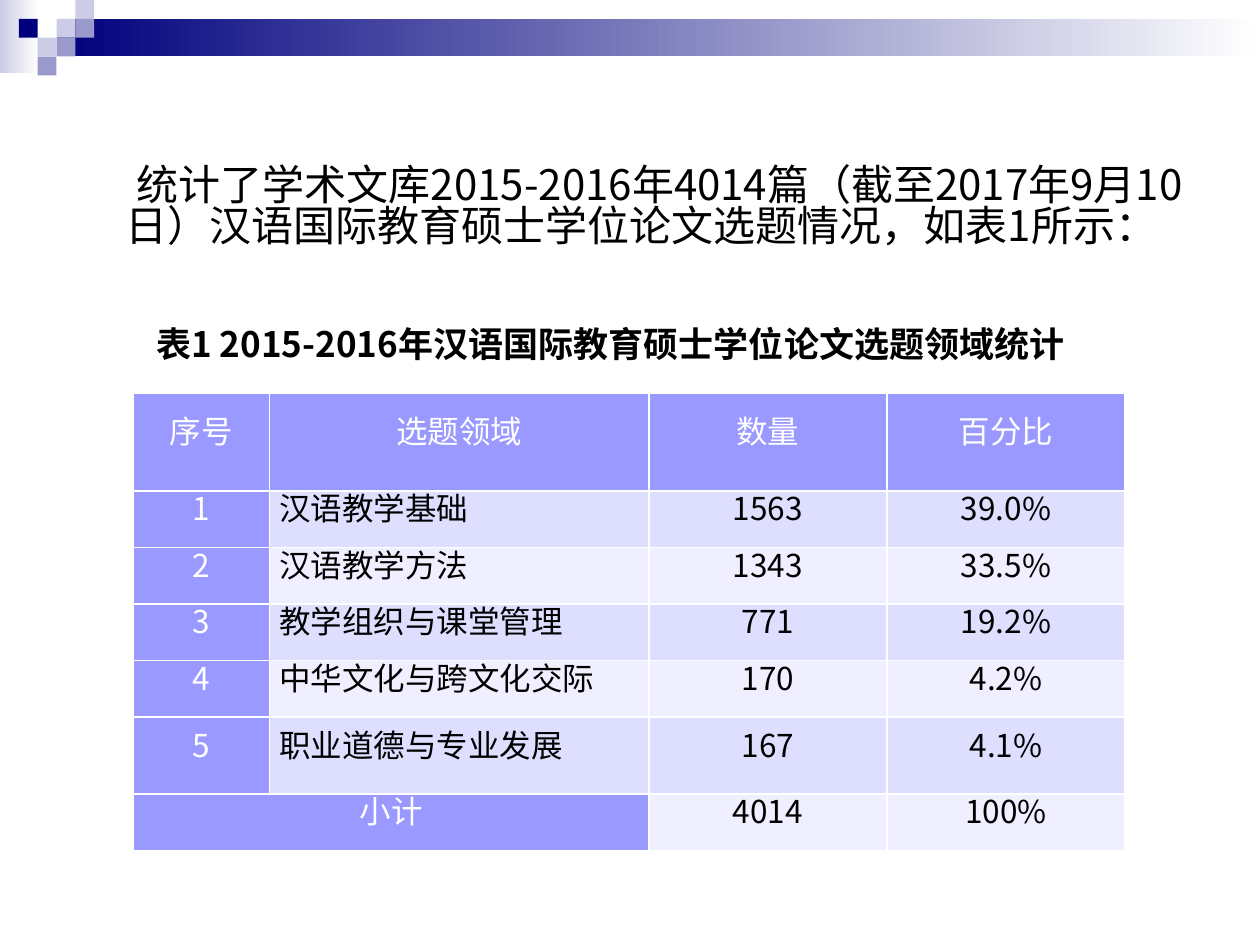
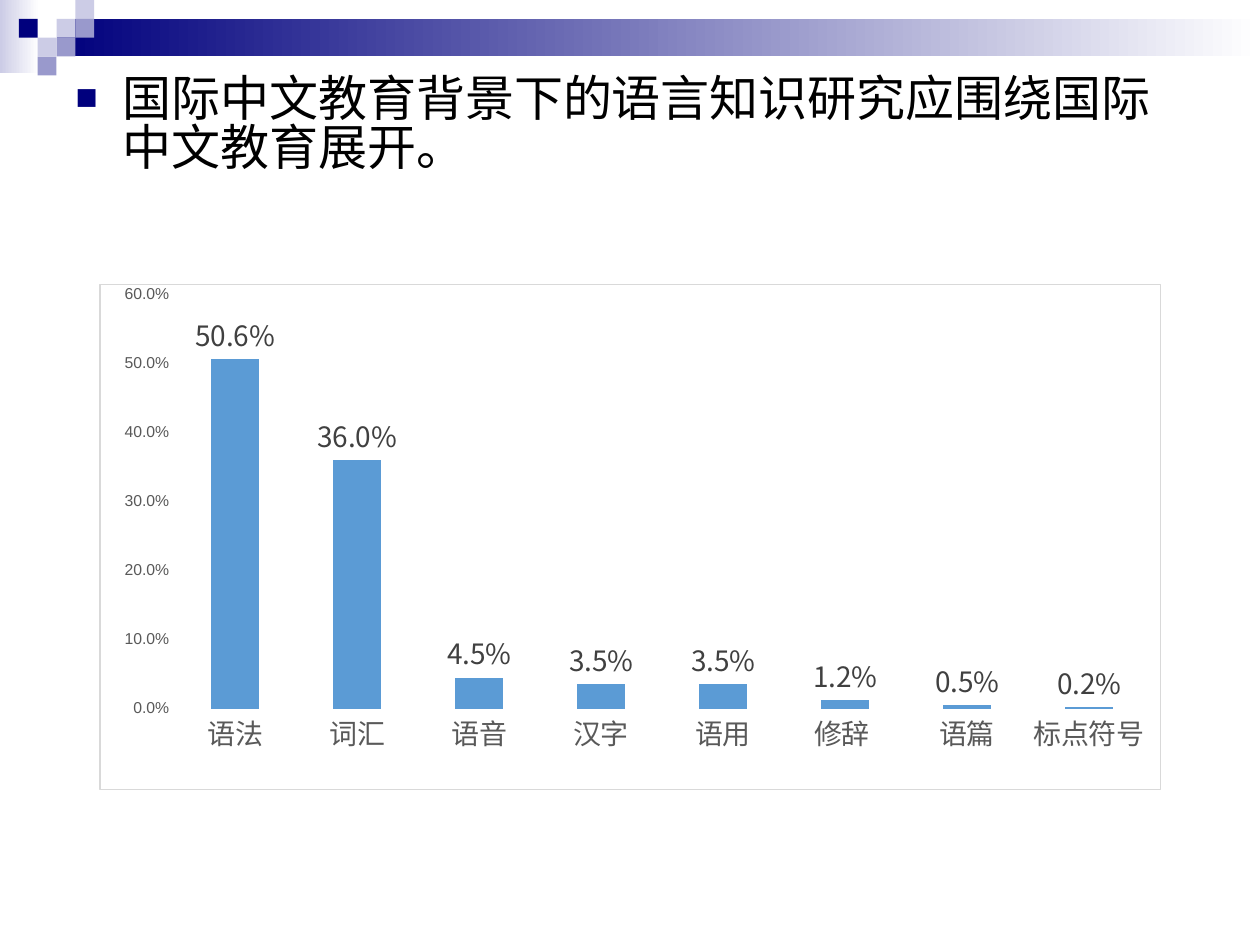
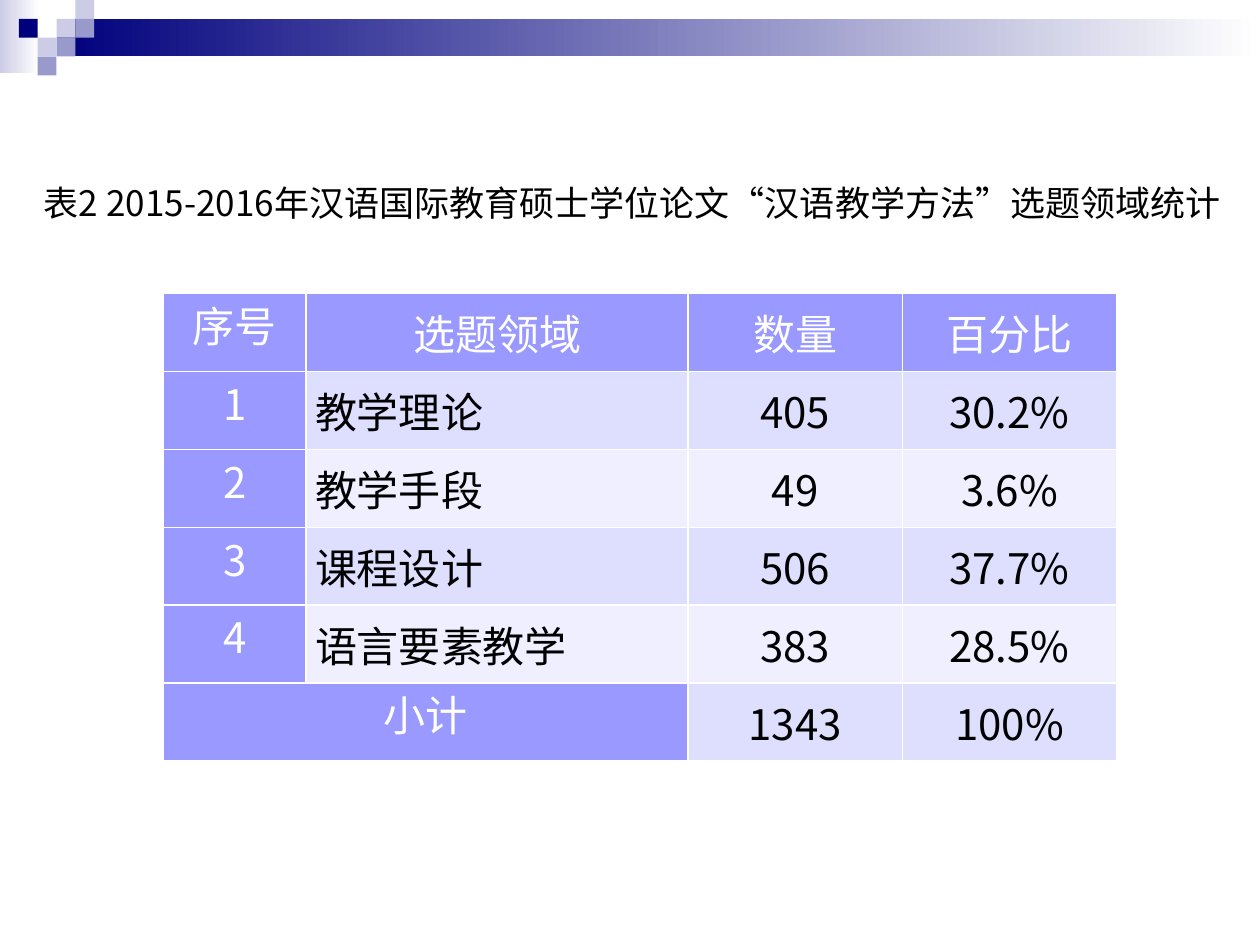
"""Build three slides on thesis topic statistics: two tables and a column chart."""
from lxml.etree import SubElement
from pptx import Presentation
from pptx.chart.data import CategoryChartData
from pptx.dml.color import RGBColor
from pptx.enum.chart import XL_CHART_TYPE, XL_LABEL_POSITION, XL_TICK_MARK
from pptx.enum.shapes import MSO_SHAPE
from pptx.enum.text import MSO_ANCHOR, MSO_AUTO_SIZE, PP_ALIGN
from pptx.oxml import parse_xml
from pptx.oxml.ns import nsdecls, qn
from pptx.util import Cm, Pt

NAVY = RGBColor(0x00, 0x00, 0x7D)
LILAC = RGBColor(0xCC, 0xCC, 0xE6)
MAUVE = RGBColor(0x99, 0x99, 0xCC)
WHITE = RGBColor(0xFF, 0xFF, 0xFF)
BLACK = RGBColor(0x00, 0x00, 0x00)
HEADER = RGBColor(0x99, 0x99, 0xFF)
EVEN_ROW = RGBColor(0xEF, 0xEF, 0xFF)
ODD_ROW = RGBColor(0xDE, 0xDE, 0xFF)
COLUMN_BLUE = RGBColor(0x5B, 0x9B, 0xD5)
AXIS_GREY = RGBColor(0x59, 0x59, 0x59)
LABEL_GREY = RGBColor(0x40, 0x40, 0x40)
FRAME_GREY = RGBColor(0xD9, 0xD9, 0xD9)

CJK_FONT = "Noto Sans CJK SC"
LATIN_FONT = "Arial"
TILE = 0.38
TILES = [(3, 1, LILAC), (4, 0, LILAC), (4, 1, MAUVE), (2, 2, LILAC),
         (1, 1, NAVY), (3, 2, MAUVE), (2, 3, MAUVE)]
HEADINGS = ("序号", "选题领域", "数量", "百分比")

FIELDS = [
    HEADINGS,
    ("1", "汉语教学基础", "1563", "39.0%"),
    ("2", "汉语教学方法", "1343", "33.5%"),
    ("3", "教学组织与课堂管理", "771", "19.2%"),
    ("4", "中华文化与跨文化交际", "170", "4.2%"),
    ("5", "职业道德与专业发展", "167", "4.1%"),
    ("小计", "", "4014", "100%"),
]
METHODS = [
    HEADINGS,
    ("1", "教学理论", "405", "30.2%"),
    ("2", "教学手段", "49", "3.6%"),
    ("3", "课程设计", "506", "37.7%"),
    ("4", "语言要素教学", "383", "28.5%"),
    ("小计", "", "1343", "100%"),
]
KNOWLEDGE = {"语法": 0.506, "词汇": 0.36, "语音": 0.045, "汉字": 0.035,
             "语用": 0.035, "修辞 ": 0.012, "语篇": 0.005, "标点符号": 0.002}


def style_font(font, size, color=BLACK, name=CJK_FONT, bold=False):
    """Set the size, colour, typeface and weight of a font."""
    font.size, font.name, font.bold = Pt(size), name, bold
    font.color.rgb = color


def write(frame, text, align=PP_ALIGN.LEFT, spacing=None, **font_format):
    """Fill a text frame with one formatted paragraph and return it."""
    paragraph = frame.paragraphs[0]
    paragraph.alignment = align
    if spacing:
        paragraph.line_spacing = spacing
    run = paragraph.add_run()
    run.text = text
    style_font(run.font, **font_format)
    return paragraph


def match_east_asian(element):
    """Give East Asian text the same typeface as Latin text."""
    for latin in list(element.iter(qn("a:latin"))):
        east_asian = parse_xml(f"<a:ea {nsdecls('a')}/>")
        east_asian.set("typeface", latin.get("typeface"))
        latin.addnext(east_asian)


def outline_cell(cell):
    """Draw white lines on all four sides of a table cell."""
    properties = cell._tc.get_or_add_tcPr()
    for index, side in enumerate(("lnL", "lnR", "lnT", "lnB")):
        line = parse_xml(
            f'<a:{side} {nsdecls("a")} w="{Pt(1)}"><a:solidFill>'
            f'<a:srgbClr val="{WHITE}"/></a:solidFill></a:{side}>')
        properties.insert(index, line)


class Deck:
    """Hold the shared style and the slide being built."""

    def __init__(self):
        self.presentation = Presentation()
        self.presentation.slide_width = Cm(25.4)
        self.presentation.slide_height = Cm(19.05)
        self.slide = None

    def new_slide(self, layout):
        """Start a slide on the numbered layout."""
        layouts = self.presentation.slide_layouts
        self.slide = self.presentation.slides.add_slide(layouts[layout])

    def decorate_master(self):
        """Put the gradient band and its tiles on the slide master."""
        band = self.slide.shapes.add_group_shape()
        self.block(band, 0, 0, 0.79, 1.47, LILAC, fade=True)
        self.block(band, 3 * TILE, TILE, 25.4 - 3 * TILE, 2 * TILE, NAVY, fade=True)
        for column, row, color in TILES:
            self.block(band, column * TILE, row * TILE, TILE, TILE, color)
        master = self.presentation.slide_master
        master.element.cSld.spTree.insert(2, band._element)

    def block(self, group, left, top, width, height, color, fade=False):
        """Add a plain rectangle, solid or fading to white."""
        block = group.shapes.add_shape(
            MSO_SHAPE.RECTANGLE, Cm(left), Cm(top), Cm(width), Cm(height))
        block.shadow.inherit = False
        block.line.fill.background()
        if fade:
            block.fill.gradient()
            block.fill.gradient_angle = 0
            for stop, shade in zip(block.fill.gradient_stops, (color, WHITE)):
                stop.color.rgb = shade
        else:
            block.fill.solid()
            block.fill.fore_color.rgb = color

    def place(self, holder, left, top, width, height, anchor):
        """Move a placeholder and return its text frame."""
        holder.left, holder.top = Cm(left), Cm(top)
        holder.width, holder.height = Cm(width), Cm(height)
        frame = holder.text_frame
        frame.word_wrap = True
        frame.auto_size = MSO_AUTO_SIZE.NONE
        frame.vertical_anchor = anchor
        return frame

    def title(self, text):
        """Write the title with an indented first line."""
        frame = self.place(self.slide.shapes.title, 1.5, 2.3, 22.86, 3.81,
                           MSO_ANCHOR.MIDDLE)
        heading = write(frame, text, PP_ALIGN.CENTER, 0.82, size=24)
        heading._p.get_or_add_pPr().set("indent", str(Cm(0.74)))

    def bullet(self, text):
        """Write the body as one item with a square bullet."""
        title = self.slide.shapes.title._element
        title.getparent().remove(title)
        frame = self.place(self.slide.placeholders[1], 1.27, 1.42, 22.86, 10.8,
                           MSO_ANCHOR.TOP)
        item = write(frame, text, spacing=0.84, size=28)
        item.space_before = Pt(5.6)
        properties = item._p.get_or_add_pPr()
        properties.set("marL", str(Cm(0.95)))
        properties.set("indent", str(-Cm(0.95)))
        bullet_color = SubElement(properties, qn("a:buClr"))
        SubElement(bullet_color, qn("a:srgbClr"), val=str(NAVY))
        SubElement(properties, qn("a:buSzPct"), val="75000")
        SubElement(properties, qn("a:buFont"), typeface=LATIN_FONT)
        SubElement(properties, qn("a:buChar"), char="■")

    def caption(self, text, left, top, width, wrap=True, **text_format):
        """Add a table caption."""
        caption = self.slide.shapes.add_textbox(
            Cm(left), Cm(top), Cm(width), Cm(1.12))
        caption.text_frame.word_wrap = wrap
        write(caption.text_frame, text, size=20, **text_format)

    def table(self, rows, left, top, widths, heights, size, margin,
              spacing=None, number_anchor=MSO_ANCHOR.MIDDLE):
        """Add a striped table whose last row is a subtotal."""
        table = self.slide.shapes.add_table(
            len(rows), len(widths), Cm(left), Cm(top),
            Cm(sum(widths)), Cm(sum(heights))).table
        for column, width in zip(table.columns, widths):
            column.width = Cm(width)
        for row, height in zip(table.rows, heights):
            row.height = Cm(height)
        last = len(rows) - 1
        table.cell(last, 0).merge(table.cell(last, 1))
        for r, row in enumerate(rows):
            for c, text in enumerate(row):
                cell = table.cell(r, c)
                heading = r == 0 or c == 0 or cell.is_spanned
                cell.fill.solid()
                cell.fill.fore_color.rgb = (
                    HEADER if heading else ODD_ROW if r % 2 else EVEN_ROW)
                outline_cell(cell)
                cell.margin_left = cell.margin_right = Cm(margin)
                cell.margin_top = cell.margin_bottom = 0
                cell.vertical_anchor = number_anchor if c == 0 else MSO_ANCHOR.MIDDLE
                if text:
                    align = PP_ALIGN.LEFT if c == 1 and r else PP_ALIGN.CENTER
                    write(cell.text_frame, text, align, spacing, size=size,
                          color=WHITE if heading else BLACK)

    def column_chart(self, shares, left, top, width, height):
        """Add a framed column chart of percentage shares."""
        data = CategoryChartData(number_format="0.0%")
        data.categories = list(shares)
        data.add_series("Series 1", list(shares.values()))
        chart = self.slide.shapes.add_chart(
            XL_CHART_TYPE.COLUMN_CLUSTERED, Cm(left), Cm(top), Cm(width),
            Cm(height), data).chart
        chart.has_legend = chart.has_title = False
        style_font(chart.font, 10, name=LATIN_FONT)
        style_font(chart.category_axis.tick_labels.font, 16, AXIS_GREY)
        scale = chart.value_axis
        style_font(scale.tick_labels.font, 9, AXIS_GREY, LATIN_FONT)
        scale.tick_labels.number_format = "0.0%"
        scale.tick_labels.number_format_is_linked = False
        scale.minimum_scale, scale.maximum_scale, scale.major_unit = 0, 0.6, 0.1
        scale.has_major_gridlines = False
        for axis in (chart.category_axis, scale):
            axis.major_tick_mark = axis.minor_tick_mark = XL_TICK_MARK.NONE
            axis.format.line.fill.background()

        plot = chart.plots[0]
        plot.gap_width, plot.vary_by_categories = 150, False
        columns = plot.series[0].format.fill
        columns.solid()
        columns.fore_color.rgb = COLUMN_BLUE
        plot.has_data_labels = True
        labels = plot.data_labels
        labels.show_value, labels.position = True, XL_LABEL_POSITION.OUTSIDE_END
        labels.number_format, labels.number_format_is_linked = "0.0%", False
        style_font(labels.font, 16, LABEL_GREY)
        self.frame_chart(chart._chartSpace)
        match_east_asian(chart._chartSpace)

    def frame_chart(self, space):
        """Fix the plot area and give the chart a white fill and grey border."""
        area = space.find(".//" + qn("c:plotArea"))
        for layout in area.findall(qn("c:layout")):
            area.remove(layout)
        layout = parse_xml(f"<c:layout {nsdecls('c')}><c:manualLayout/></c:layout>")
        for tag, value in (("layoutTarget", "inner"), ("xMode", "edge"),
                           ("yMode", "edge"), ("x", "0.07"), ("y", "0.02"),
                           ("w", "0.92"), ("h", "0.82")):
            SubElement(layout[0], qn(f"c:{tag}"), val=value)
        area.insert(0, layout)
        space.find(qn("c:txPr")).addprevious(parse_xml(
            f'<c:spPr {nsdecls("c", "a")}><a:solidFill><a:srgbClr val="{WHITE}"/>'
            f'</a:solidFill><a:ln w="{Pt(0.75)}"><a:solidFill>'
            f'<a:srgbClr val="{FRAME_GREY}"/></a:solidFill></a:ln></c:spPr>'))

    def save(self):
        """Match East Asian typefaces and save the file."""
        for slide in self.presentation.slides:
            match_east_asian(slide.element)
        self.presentation.save("out.pptx")


def main():
    """Build the slides in order."""
    deck = Deck()
    deck.new_slide(5)
    deck.decorate_master()
    deck.title("统计了学术文库2015-2016年4014篇（截至2017年9月10日）"
               "汉语国际教育硕士学位论文选题情况，如表1所示：")
    deck.table(FIELDS, 2.69, 7.92, [2.74, 7.65, 4.8, 4.8],
               [1.98] + [1.14] * 4 + [1.55, 1.14], 18, 0.2, spacing=Pt(12))
    deck.caption("表1 2015-2016年汉语国际教育硕士学位论文选题领域统计",
                 2.9, 6.38, 19.61, bold=True)

    deck.new_slide(1)
    deck.bullet("国际中文教育背景下的语言知识研究应围绕国际中文教育展开。")
    deck.column_chart(KNOWLEDGE, 2, 5.72, 21.41, 10.21)

    deck.new_slide(6)
    deck.table(METHODS, 3.3, 5.92, [2.87, 7.7, 4.32, 4.32],
               [1.57] * len(METHODS), 24, 0.18, number_anchor=MSO_ANCHOR.TOP)
    deck.caption("表2 2015-2016年汉语国际教育硕士学位论文“汉语教学方法”选题领域统计",
                 0.28, 3.53, 24.94, wrap=False, align=PP_ALIGN.CENTER)
    deck.save()


if __name__ == "__main__":
    main()
